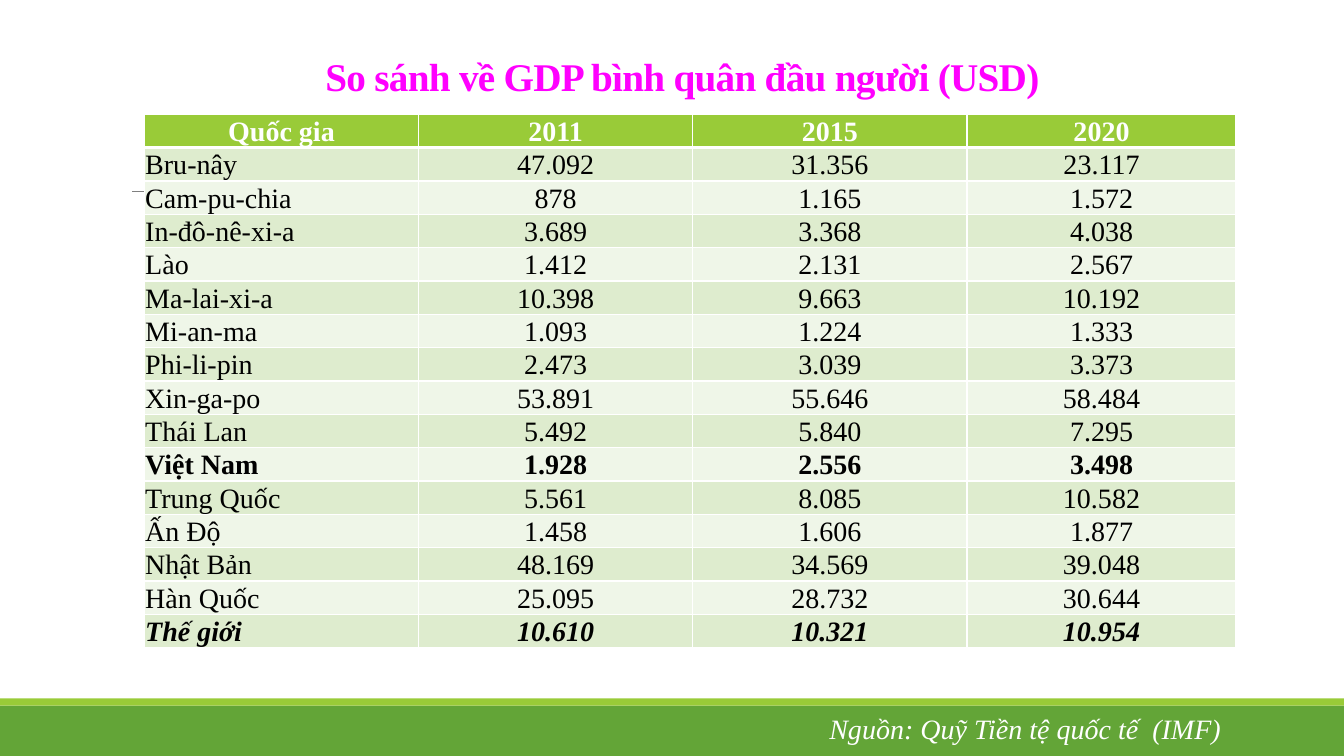
from typing import NamedTuple

from lxml.etree import SubElement
from pptx import Presentation
from pptx.dml.color import RGBColor
from pptx.enum.shapes import MSO_CONNECTOR, MSO_SHAPE
from pptx.enum.text import MSO_ANCHOR, MSO_AUTO_SIZE, PP_ALIGN
from pptx.oxml.ns import qn
from pptx.slide import Slide
from pptx.table import _Cell
from pptx.text.text import _Paragraph, _Run
from pptx.util import Cm, Pt

FONT = "Times New Roman"
WHITE, BLACK, MAGENTA, GREY = "FFFFFF", "000000", "FF00FF", "808080"
LIME, GREEN = "99CB38", "63A537"
BAND_FILLS = ("DEECCE", "EFF6E8")
SLIDE_W, SLIDE_H = 33.87, 19.05
ROW_H = 0.84
COLUMN_WIDTHS = (6.91, 6.91, 6.91, 6.78)


class Bar(NamedTuple):
    top: float
    height: float
    color: str


class GdpRow(NamedTuple):
    country: str
    gdp_2011: str
    gdp_2015: str
    gdp_2020: str
    bold: bool = False
    italic: bool = False


BARS = [Bar(17.78, 1.27, GREEN), Bar(17.6, 0.18, LIME)]

HEADER = GdpRow("Quốc gia", "2011", "2015", "2020", bold=True)
ROWS = [
    GdpRow("Bru-nây", "47.092", "31.356", "23.117"),
    GdpRow("Cam-pu-chia", "878", "1.165", "1.572"),
    GdpRow("In-đô-nê-xi-a", "3.689", "3.368", "4.038"),
    GdpRow("Lào", "1.412", "2.131", "2.567"),
    GdpRow("Ma-lai-xi-a", "10.398", "9.663", "10.192"),
    GdpRow("Mi-an-ma", "1.093", "1.224", "1.333"),
    GdpRow("Phi-li-pin", "2.473", "3.039", "3.373"),
    GdpRow("Xin-ga-po", "53.891", "55.646", "58.484"),
    GdpRow("Thái Lan", "5.492", "5.840", "7.295"),
    GdpRow("Việt Nam", "1.928", "2.556", "3.498", bold=True),
    GdpRow("Trung Quốc", "5.561", "8.085", "10.582"),
    GdpRow("Ấn Độ", "1.458", "1.606", "1.877"),
    GdpRow("Nhật Bản", "48.169", "34.569", "39.048"),
    GdpRow("Hàn Quốc", "25.095", "28.732", "30.644"),
    GdpRow("Thế giới", "10.610", "10.321", "10.954", bold=True, italic=True),
]


def rgb(color: str) -> RGBColor:
    return RGBColor.from_string(color)


def add_run(p: _Paragraph, text: str, size: float, color: str,
            bold: bool = False, italic: bool = False) -> _Run:
    r = p.add_run()
    r.text = text
    r.font.name = FONT
    r.font.size = Pt(size)
    r.font.bold = bold
    r.font.italic = italic
    r.font.color.rgb = rgb(color)
    return r


def add_bar(s: Slide, bar: Bar) -> None:
    sp = s.shapes.add_shape(MSO_SHAPE.RECTANGLE, 0, Cm(bar.top), Cm(SLIDE_W), Cm(bar.height))
    sp.shadow.inherit = False
    sp.fill.solid()
    sp.fill.fore_color.rgb = rgb(bar.color)
    sp.line.fill.background()


def add_rule(s: Slide) -> None:
    """Draw the thin grey line that runs behind the table."""
    y = Cm(4.82)
    line = s.shapes.add_connector(MSO_CONNECTOR.STRAIGHT, Cm(3.33), y, Cm(31.02), y)
    line.line.color.rgb = rgb(GREY)
    line.line.width = Pt(0.5)
    SubElement(line._element.spPr, qn("a:effectLst"))


def set_title(s: Slide) -> None:
    sp = s.shapes.title
    sp.left, sp.top, sp.width, sp.height = Cm(2.46), Cm(0.71), Cm(29.46), Cm(1.93)
    sp.fill.solid()
    sp.fill.fore_color.rgb = rgb(WHITE)
    tf = sp.text_frame
    tf.word_wrap = True
    tf.auto_size = MSO_AUTO_SIZE.NONE
    tf.vertical_anchor = MSO_ANCHOR.BOTTOM
    p = tf.paragraphs[0]
    p.alignment = PP_ALIGN.CENTER
    p.line_spacing = 1.5
    r = add_run(p, "So sánh về GDP bình quân đầu người (USD)", 28, MAGENTA, bold=True)
    r.font._element.set("spc", "-50")


def set_borders(cell: _Cell, widths: dict[str, float]) -> None:
    """Give each named side a white border of the given width in points."""
    tc_pr = cell._tc.get_or_add_tcPr()
    for side, width in widths.items():
        ln = SubElement(tc_pr, qn(f"a:{side}"), w=str(Pt(width)))
        fill = SubElement(ln, qn("a:solidFill"))
        SubElement(fill, qn("a:srgbClr"), val=WHITE)


def fill_cell(cell: _Cell, text: str, row: GdpRow, fill: str, color: str,
              align: PP_ALIGN, top: float, bottom: float) -> None:
    set_borders(cell, {"lnL": 1, "lnR": 1, "lnT": top, "lnB": bottom})
    cell.fill.solid()
    cell.fill.fore_color.rgb = rgb(fill)
    cell.vertical_anchor = MSO_ANCHOR.BOTTOM
    cell.margin_left = cell.margin_right = cell.margin_top = Cm(0.02)
    cell.margin_bottom = 0
    p = cell.text_frame.paragraphs[0]
    p.alignment = align
    add_run(p, text, 20, color, row.bold, row.italic)


def add_gdp_table(s: Slide) -> None:
    rows = [HEADER, *ROWS]
    table = s.shapes.add_table(len(rows), len(COLUMN_WIDTHS), Cm(3.64), Cm(2.88),
                               Cm(sum(COLUMN_WIDTHS)), Cm(ROW_H * len(rows))).table
    for column, width in zip(table.columns, COLUMN_WIDTHS):
        column.width = Cm(width)
    for i, row in enumerate(rows):
        table.rows[i].height = Cm(ROW_H)
        is_header = i == 0
        fill = LIME if is_header else BAND_FILLS[(i - 1) % 2]
        color = WHITE if is_header else BLACK
        top, bottom = 3 if i == 1 else 1, 3 if is_header else 1
        for j, text in enumerate(row[:len(COLUMN_WIDTHS)]):
            align = PP_ALIGN.CENTER if is_header or j else PP_ALIGN.LEFT
            fill_cell(table.cell(i, j), text, row, fill, color, align, top, bottom)


def add_source(s: Slide) -> None:
    sp = s.shapes.add_textbox(Cm(20.65), Cm(17.81), Cm(10.46), Cm(1.12))
    tf = sp.text_frame
    tf.word_wrap = False
    tf.auto_size = MSO_AUTO_SIZE.SHAPE_TO_FIT_TEXT
    add_run(tf.paragraphs[0], "Nguồn: Quỹ Tiền tệ quốc tế  (IMF)", 20, WHITE, italic=True)


def main() -> None:
    prs = Presentation()
    prs.slide_width, prs.slide_height = Cm(SLIDE_W), Cm(SLIDE_H)
    s = prs.slides.add_slide(prs.slide_layouts[5])
    set_title(s)
    for bar in BARS:
        add_bar(s, bar)
    add_rule(s)
    add_gdp_table(s)
    add_source(s)
    prs.save("out.pptx")


if __name__ == "__main__":
    main()
